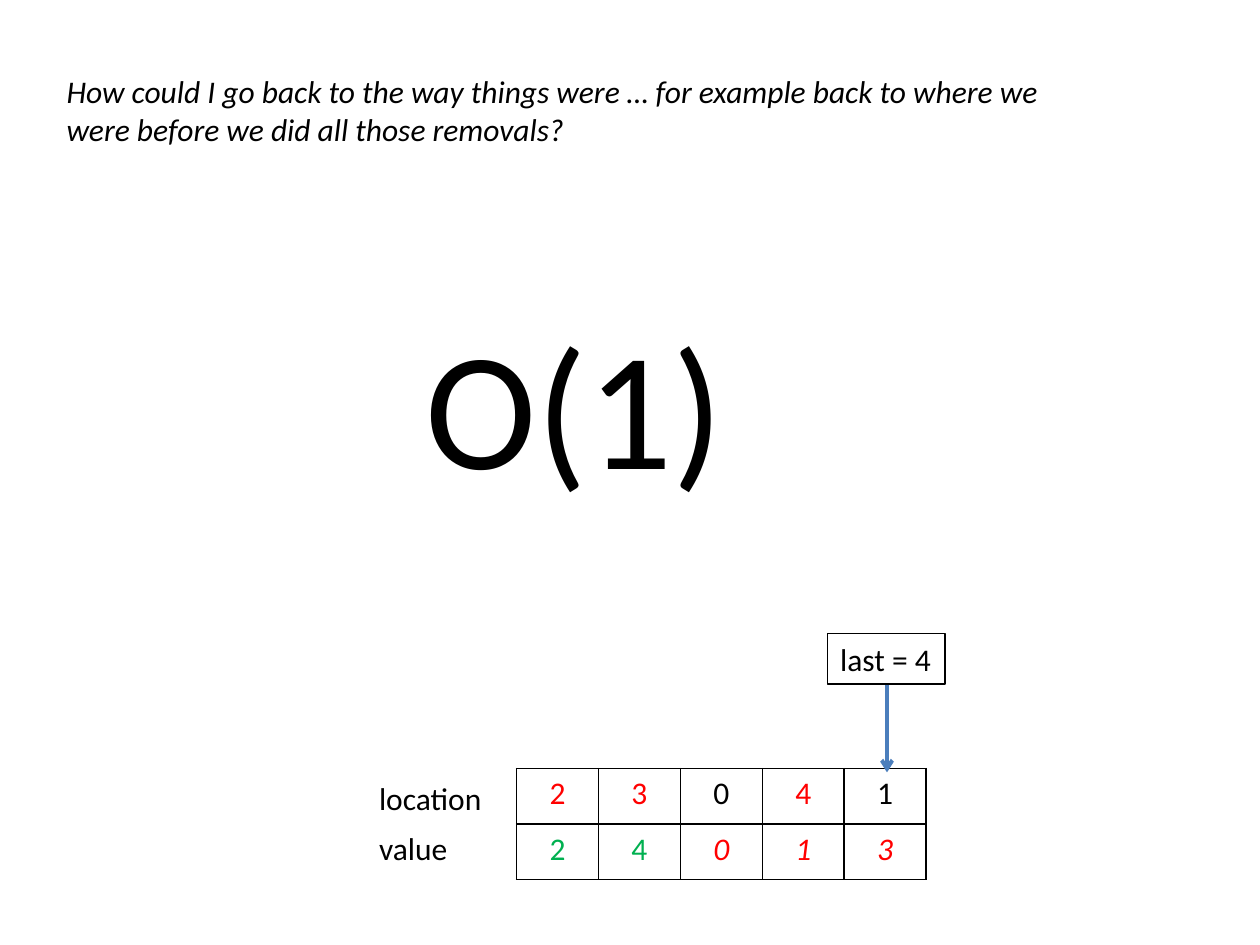
from dataclasses import dataclass

from lxml import etree
from pptx import Presentation
from pptx.dml.color import RGBColor
from pptx.enum import shapes, text
from pptx.oxml import ns
from pptx.util import Inches, Pt


@dataclass(frozen=True)
class Theme:
    font: str = "Calibri"
    body: int = 18
    display: int = 96
    black: RGBColor = RGBColor(0, 0, 0)
    red: RGBColor = RGBColor(0xFF, 0, 0)
    green: RGBColor = RGBColor(0, 0xB0, 0x50)
    blue: RGBColor = RGBColor(0x4B, 0x7E, 0xBC)


THEME = Theme()

# Each cell: text, colour, italic
ROWS = [
    [("2", THEME.red, False), ("3", THEME.red, False), ("0", THEME.black, False),
     ("4", THEME.red, False), ("1", THEME.black, False)],
    [("2", THEME.green, False), ("4", THEME.green, False), ("0", THEME.red, True),
     ("1", THEME.red, True), ("3", THEME.red, True)],
]


def style_paragraph(para, size=THEME.body, color=THEME.black, italic=False):
    para.font.name = THEME.font
    para.font.size = Pt(size)
    para.font.color.rgb = color
    para.font.italic = italic


def add_label(page, lines, left, top, width, height, **style):
    box = page.shapes.add_textbox(Inches(left), Inches(top), Inches(width), Inches(height))
    frame = box.text_frame
    frame.word_wrap = False
    frame.auto_size = text.MSO_AUTO_SIZE.SHAPE_TO_FIT_TEXT
    frame.text = "\n".join(lines)
    for para in frame.paragraphs:
        style_paragraph(para, **style)
    return box


def add_borders(cell, color, width):
    properties = cell._tc.get_or_add_tcPr()
    for side in ("lnL", "lnR", "lnT", "lnB"):
        line = etree.SubElement(properties, ns.qn(f"a:{side}"), w=str(Pt(width)))
        fill = etree.SubElement(line, ns.qn("a:solidFill"))
        etree.SubElement(fill, ns.qn("a:srgbClr"), val=str(color))


def add_array_table(page, rows, left, top, column_width, row_height):
    columns = len(rows[0])
    table = page.shapes.add_table(
        len(rows), columns, Inches(left), Inches(top),
        Inches(column_width * columns), Inches(row_height * len(rows))).table
    table.first_row = False
    table.horz_banding = False
    for row, values in zip(table.rows, rows):
        row.height = Inches(row_height)
        for cell, (value, color, italic) in zip(row.cells, values):
            cell.text = value
            para = cell.text_frame.paragraphs[0]
            para.alignment = text.PP_ALIGN.CENTER
            style_paragraph(para, color=color, italic=italic)
            add_borders(cell, THEME.black, 1)
            cell.fill.background()


def add_down_arrow(page, x, top, bottom):
    arrow = page.shapes.add_connector(
        shapes.MSO_CONNECTOR.STRAIGHT, Inches(x), Inches(top), Inches(x), Inches(bottom))
    arrow.line.color.rgb = THEME.blue
    arrow.line.width = Pt(2.25)
    etree.SubElement(arrow.line._get_or_add_ln(), ns.qn("a:tailEnd"), type="arrow")
    etree.SubElement(arrow._element.spPr, ns.qn("a:effectLst"))


def main():
    deck = Presentation()
    deck.slide_width, deck.slide_height = Inches(10), Inches(7.5)
    page = deck.slides.add_slide(deck.slide_layouts[6])

    # Question and its answer
    add_label(page, ["How could I go back to the way things were … for example back to where we",
                     "were before we did all those removals?"],
              0.43, 0.52, 8.03, 0.71, italic=True)
    add_label(page, ["O(1)"], 3.28, 2.34, 2.59, 1.72, size=THEME.display)

    # Arrays with their row labels
    add_array_table(page, ROWS, 4.1, 6.1, 0.65, 0.44)
    add_label(page, ["location"], 2.91, 6.13, 1.02, 0.4)
    add_label(page, ["value"], 2.91, 6.53, 0.75, 0.4)

    # Pointer to the last cell
    pointer = add_label(page, ["last = 4"], 6.57, 5.03, 0.93, 0.4)
    pointer.line.color.rgb = THEME.black
    pointer.line.width = Pt(0.75)
    add_down_arrow(page, 7.04, 5.44, 6.13)

    deck.save("out.pptx")


if __name__ == "__main__":
    main()
